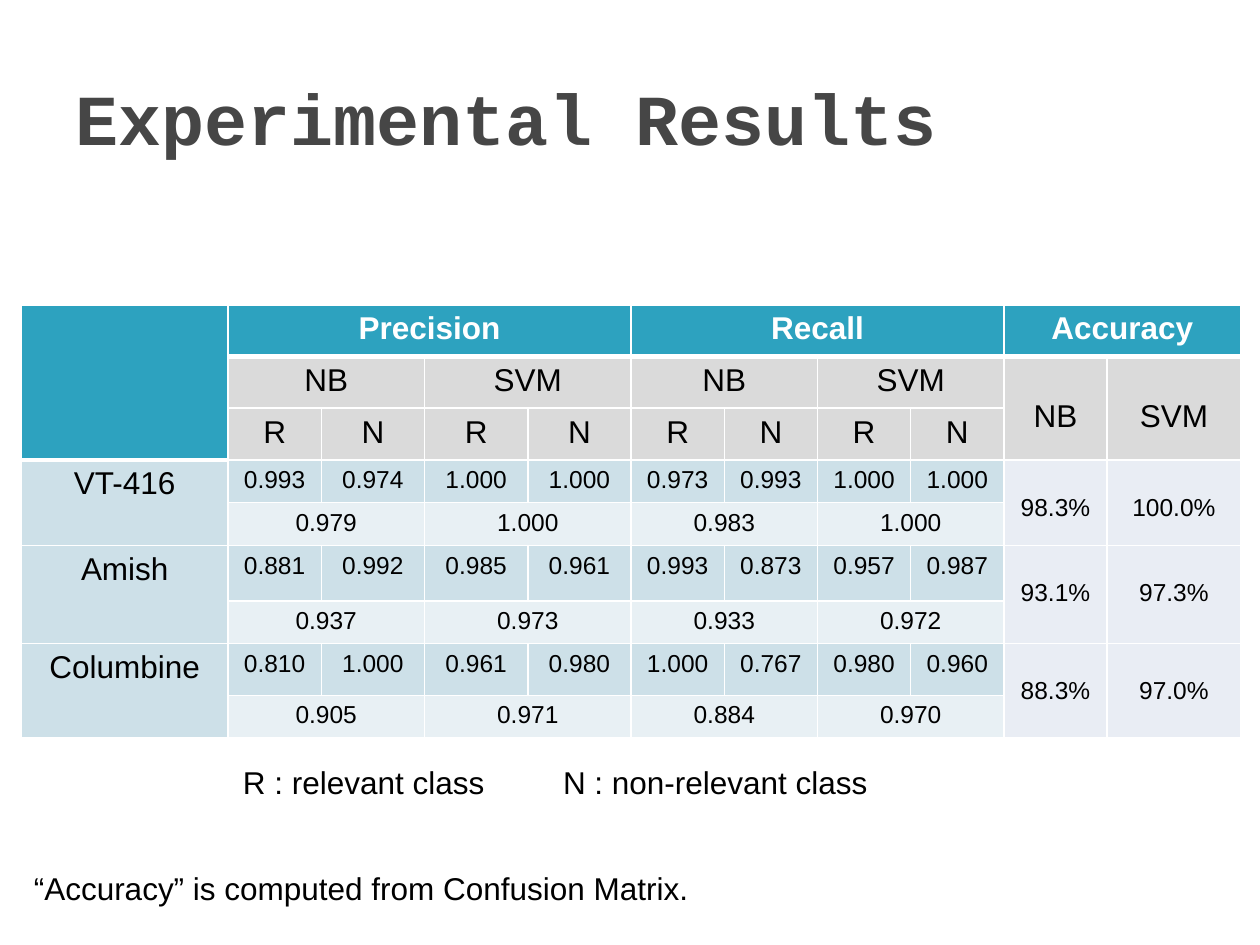
from lxml.etree import SubElement
from pptx import Presentation
from pptx.dml.color import RGBColor
from pptx.enum.text import MSO_ANCHOR, MSO_AUTO_SIZE, PP_ALIGN
from pptx.oxml.ns import qn
from pptx.util import Inches, Pt

TITLE = "Experimental Results"
GROUPS = [("Precision", 1, 4), ("Recall", 5, 4), ("Accuracy", 9, 2)]
METHODS = ["NB", "SVM"]
CLASSES = ["R", "N"]
RESULTS = [
    ("VT-416",
     ["0.993", "0.974", "1.000", "1.000", "0.973", "0.993", "1.000", "1.000"],
     ["0.979", "1.000", "0.983", "1.000"], ["98.3%", "100.0%"]),
    ("Amish",
     ["0.881", "0.992", "0.985", "0.961", "0.993", "0.873", "0.957", "0.987"],
     ["0.937", "0.973", "0.933", "0.972"], ["93.1%", "97.3%"]),
    ("Columbine",
     ["0.810", "1.000", "0.961", "0.980", "1.000", "0.767", "0.980", "0.960"],
     ["0.905", "0.971", "0.884", "0.970"], ["88.3%", "97.0%"]),
]
NOTES = [
    ("R : relevant class\tN : non-relevant class", (1.83, 6.01, 5.75, 0.4)),
    ("“Accuracy” is computed from Confusion Matrix.", (0.17, 6.85, 9.08, 0.4)),
]
COLS = [1.64, 0.74, 0.82, 0.82, 0.82, 0.74, 0.74, 0.74, 0.74, 0.82, 1.06]
ROWS = [0.41, 0.41, 0.41, 0.34, 0.34, 0.44, 0.34, 0.41, 0.34]
TEAL, GREY, BLUE, PALE, LILAC = "2DA2BF", "DADADA", "CDE0E8", "E8F0F4", "E9EDF4"
BODY = {"name": "Arial", "size": Pt(18), "bold": False}
HEAD = {**BODY, "bold": True}
SMALL = {**BODY, "size": Pt(14)}
HEADING = {"name": "Courier New", "size": Pt(41), "bold": True}


def rgb(value):
    """Turn a hex string into a colour."""
    return RGBColor.from_string(value)


def write(p, text, fmt, color="000000"):
    """Add one formatted run to a paragraph."""
    r = p.add_run()
    r.text = text
    for name, value in fmt.items():
        setattr(r.font, name, value)
    r.font.color.rgb = rgb(color)


def add_borders(cell, bottom):
    """Draw white lines on the four sides of a cell."""
    tc_pr = cell._tc.get_or_add_tcPr()
    for side, width in (("L", 1), ("R", 1), ("T", 1), ("B", bottom)):
        ln = SubElement(tc_pr, qn(f"a:ln{side}"), w=str(Pt(width)))
        SubElement(SubElement(ln, qn("a:solidFill")), qn("a:srgbClr"), val="FFFFFF")


def put(table, row, col, text, fill, fmt=BODY, rows=1, cols=1, color="000000",
        drop=0, bottom=1):
    """Fill a cell or merged block, its text lowered by drop inches."""
    cell = table.cell(row, col)
    for i in range(row, row + rows):
        for j in range(col, col + cols):
            part = table.cell(i, j)
            add_borders(part, bottom)
            part.fill.solid()
            part.fill.fore_color.rgb = rgb(fill)
    if rows * cols > 1:
        cell.merge(table.cell(row + rows - 1, col + cols - 1))
    cell.margin_top = Inches(0.05 + drop)
    p = cell.text_frame.paragraphs[0]
    p.alignment = PP_ALIGN.CENTER
    if text:
        write(p, text, fmt, color)


def fill_header(table):
    """Write the three header rows."""
    put(table, 0, 0, "", TEAL, rows=3, bottom=3)
    for name, col, span in GROUPS:
        put(table, 0, col, name, TEAL, HEAD, cols=span, color="FFFFFF", bottom=3)
    for i in range(4):
        put(table, 1, 1 + 2 * i, METHODS[i % 2], GREY, cols=2)
        for j, name in enumerate(CLASSES):
            put(table, 2, 1 + 2 * i + j, name, GREY)
    for j, name in enumerate(METHODS):
        put(table, 1, 9 + j, name, GREY, rows=2, drop=0.29)


def fill_results(table):
    """Write two rows for each data set."""
    for i, (name, by_class, means, accuracy) in enumerate(RESULTS):
        row = 3 + 2 * i
        put(table, row, 0, name, BLUE, rows=2)
        for j, value in enumerate(by_class):
            put(table, row, 1 + j, value, BLUE, SMALL)
        for j, value in enumerate(means):
            put(table, row + 1, 1 + 2 * j, value, PALE, SMALL, cols=2)
        for j, value in enumerate(accuracy):
            put(table, row, 9 + j, value, LILAC, SMALL, rows=2, drop=0.22)


def add_note(s, text, box):
    """Add a line of text with one tab stop."""
    tf = s.shapes.add_textbox(*map(Inches, box)).text_frame
    tf.word_wrap = True
    tf.auto_size = MSO_AUTO_SIZE.SHAPE_TO_FIT_TEXT
    p = tf.paragraphs[0]
    tabs = SubElement(p._p.get_or_add_pPr(), qn("a:tabLst"))
    SubElement(tabs, qn("a:tab"), pos=str(Inches(2.54)), algn="l")
    write(p, text, BODY)


def main():
    """Build the slide."""
    prs = Presentation()
    prs.slide_width, prs.slide_height = Inches(10), Inches(7.5)
    s = prs.slides.add_slide(prs.slide_layouts[5])

    title = s.shapes.title
    title.left, title.top, title.width, title.height = map(Inches, (0.5, 0.3, 9, 1.25))
    tf = title.text_frame
    tf.auto_size = MSO_AUTO_SIZE.NONE
    tf.vertical_anchor = MSO_ANCHOR.MIDDLE
    tf.paragraphs[0].alignment = PP_ALIGN.LEFT
    write(tf.paragraphs[0], TITLE, HEADING, "464646")

    box = map(Inches, (0.17, 2.42, sum(COLS), sum(ROWS)))
    table = s.shapes.add_table(len(ROWS), len(COLS), *box).table
    for col, width in zip(table.columns, COLS):
        col.width = Inches(width)
    for row, height in zip(table.rows, ROWS):
        row.height = Inches(height)
    fill_header(table)
    fill_results(table)

    for text, place in NOTES:
        add_note(s, text, place)
    prs.save("out.pptx")


if __name__ == "__main__":
    main()
